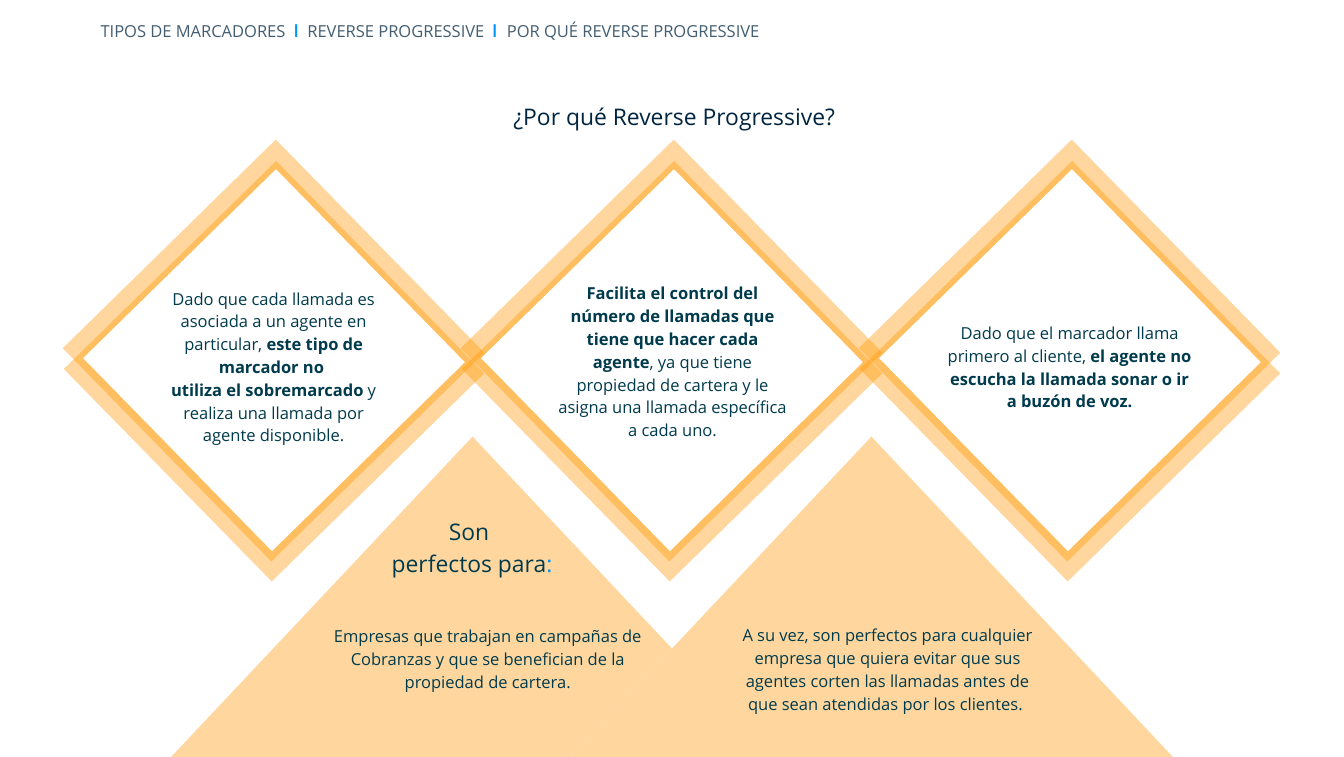
"""Build the slide on why to use the Reverse Progressive dialer."""
from lxml import etree
from pptx import Presentation, util as u
from pptx.dml import color
from pptx.enum import shapes, text
from pptx.oxml import ns

THEME = {
    "font": "Open Sans", "bar font": "Manrope",
    "ink": "003B4D", "navy": "002540", "slate": "435E72",
    "blue": "0095FF", "orange": "FF9800", "white": "FFFFFF",
    "alpha": 38, "body": 13, "bar": 14, "head": 18,
}
KIND = shapes.MSO_SHAPE
MID, TOP = text.MSO_ANCHOR.MIDDLE, text.MSO_ANCHOR.TOP
MARGINS = ("margin_left", "margin_top", "margin_right", "margin_bottom")

deck = Presentation()
deck.slide_width, deck.slide_height = u.Inches(14.69), u.Inches(8.27)
slide = deck.slides.add_slide(deck.slide_layouts[6])


def draw(kind, area, fill, alpha=100, turn=0):
    """Add a borderless shape with a solid fill."""
    shape = slide.shapes.add_shape(kind, *map(u.Inches, area))
    shape.shadow.inherit = False
    shape.rotation = turn
    shape.line.fill.background()
    shape.fill.solid()
    shape.fill.fore_color.rgb = color.RGBColor.from_string(THEME[fill])
    if alpha < 100:
        tint = shape.fill._xPr.find(".//" + ns.qn("a:srgbClr"))
        etree.SubElement(tint, ns.qn("a:alpha"), val=str(alpha * 1000))


def write(area, paras, size="body", ink="ink", pads=(0.1, 0.1), anchor=TOP,
          align=text.PP_ALIGN.CENTER, space=1.15, tabs=()):
    """Add a text box; each run is its words and any format changes."""
    frame = slide.shapes.add_textbox(*map(u.Inches, area)).text_frame
    frame.word_wrap = True
    frame.vertical_anchor = anchor
    for side, pad in zip(MARGINS, pads * 2):
        setattr(frame, side, u.Inches(pad))
    for i, runs in enumerate(paras):
        para = frame.add_paragraph() if i else frame.paragraphs[0]
        para.alignment, para.line_spacing = align, space
        if tabs:
            stops = etree.SubElement(para._p.get_or_add_pPr(), ns.qn("a:tabLst"))
            for stop in tabs:
                etree.SubElement(stops, ns.qn("a:tab"), pos=str(u.Inches(stop)), algn="l")
        for words, change in runs:
            run = para.add_run()
            run.text = words
            look = {"name": "font", "size": size, "ink": ink, "bold": False} | change
            run.font.color.rgb = color.RGBColor.from_string(THEME[look["ink"]])
            style = {"name": THEME[look["name"]], "size": u.Pt(THEME[look["size"]]),
                     "bold": look["bold"]}
            for key, value in style.items():
                setattr(run.font, key, value)


BOLD = {"bold": True}
BAR = {"name": "bar font", "size": "bar", "ink": "blue", "bold": True}

write((0.95, 0.1, 8.12, 0.47),
      [[("TIPOS DE MARCADORES\t", {}), ("|", BAR), ("\tREVERSE PROGRESSIVE\t", {}),
        ("|", BAR), ("\tPOR QUÉ REVERSE PROGRESSIVE", {})]],
      ink="slate", pads=(0.15, 0.15), anchor=MID, align=text.PP_ALIGN.LEFT,
      space=1, tabs=(2.11, 2.26, 4.28, 4.44))
write((5.08, 0.91, 4.58, 0.56), [[("¿Por qué Reverse Progressive?", {})]],
      size="head", ink="navy", pads=(0.11, 0.06), space=1.5)

LAYERS = [(0.01, 2.43, 3.25, "orange", THEME["alpha"]),
          (0, 2.2, 3.26, "orange", THEME["alpha"]),
          (0.16, 2.46, 2.95, "white", 100)]
for i in range(3):
    left = 1.36 + 4.35 * i
    for shift, top, side, fill, alpha in LAYERS:
        draw(KIND.RECTANGLE, (left + shift, top, side, side), fill, alpha, 45.6)

for i in range(2):
    for fill, alpha in (("white", 100), ("orange", THEME["alpha"])):
        draw(KIND.ISOSCELES_TRIANGLE, (1.87 + 4.36 * i, 4.77, 6.59, 3.5), fill, alpha)

write((1.64, 3.02, 2.7, 1.84),
      [[("Dado que cada llamada es asociada a un agente en particular, ", {}),
        ("este tipo de marcador no ", BOLD)],
       [("utiliza el sobremarcado", BOLD),
        (" y realiza una llamada por agente disponible.", {})]])
write((6, 2.7, 2.7, 2.47),
      [[("Facilita el control del número de llamadas que tiene que hacer cada agente", BOLD),
        (", ya que tiene propiedad de cartera y le asigna una llamada "
         "específica a cada uno.", {})]], anchor=MID)
write((10.22, 2.76, 2.94, 2.47),
      [[("Dado que el marcador llama primero al cliente, ", {}),
        ("el agente no escucha la llamada sonar o ir a buzón de voz.", BOLD)]], anchor=MID)

write((3.81, 5.55, 2.7, 0.85),
      [[("Son ", {})], [("perfectos para", {}), (":", {"ink": "blue"})]],
      size="head", pads=(0.11, 0.06))
write((3.53, 6.71, 3.6, 0.92),
      [[("Empresas que trabajan en campañas de Cobranzas y que se benefician "
         "de la propiedad de cartera.", {})]])
write((7.9, 6.7, 3.6, 1.18),
      [[("A su vez, son perfectos para cualquier empresa que quiera evitar que sus agentes "
         "corten las llamadas antes de que sean atendidas por los clientes. ", {})]])

deck.save("out.pptx")
